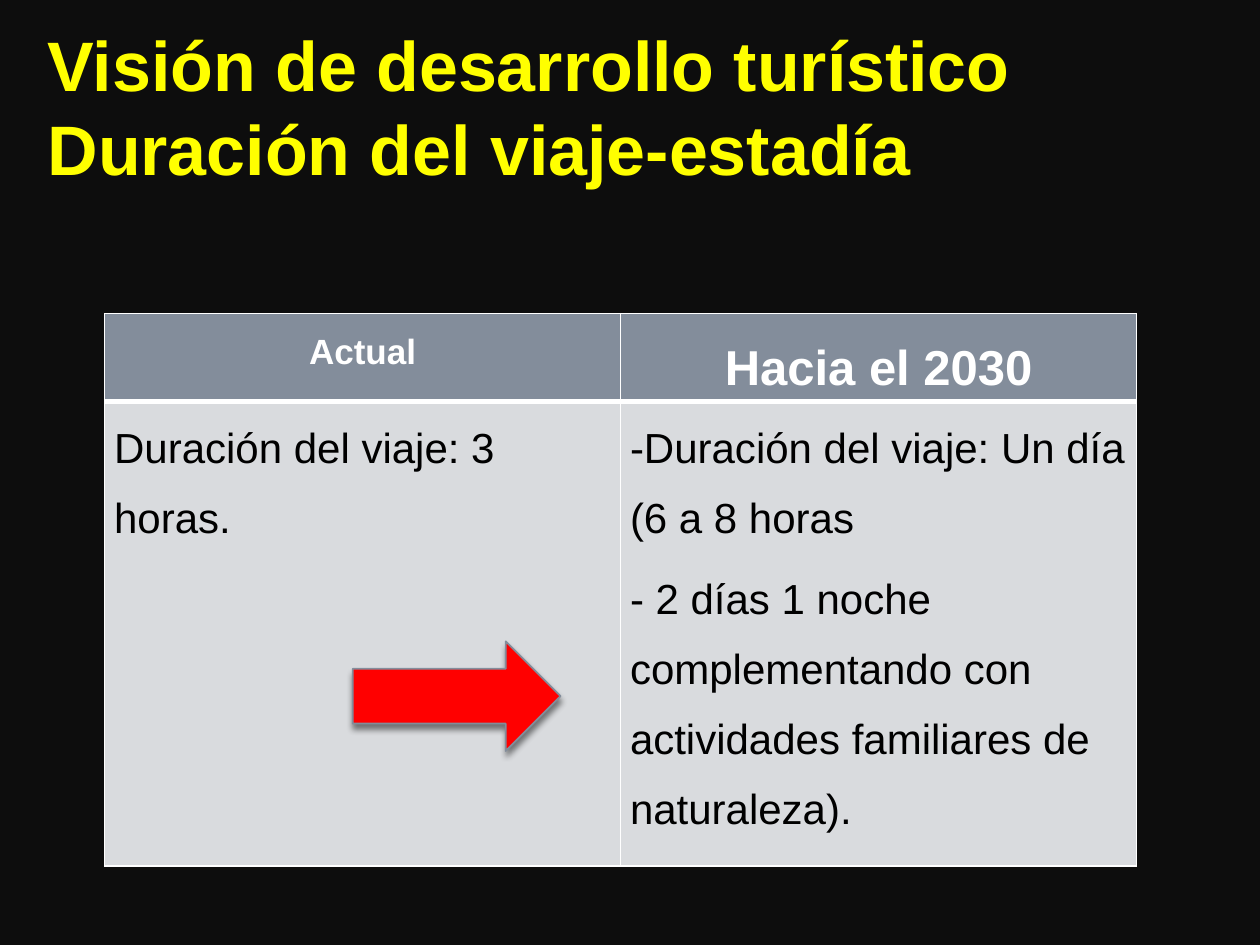
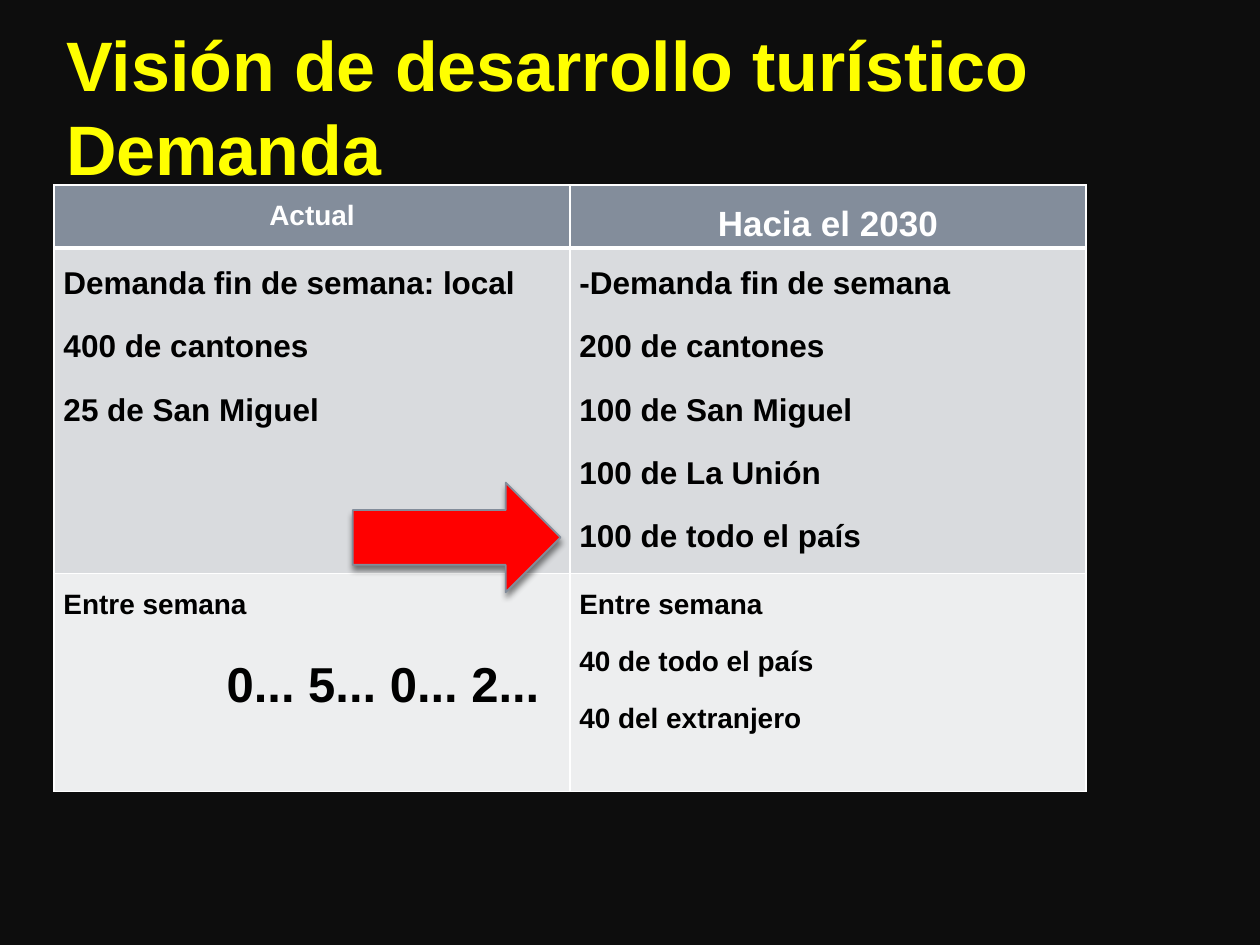
from lxml import etree
from pptx import Presentation
from pptx.dml.color import RGBColor
from pptx.enum.shapes import MSO_SHAPE as Preset
from pptx.enum.text import MSO_ANCHOR as Anchor, PP_ALIGN as Align
from pptx.oxml import parse_xml
from pptx.oxml.ns import nsdecls, qn
from pptx.util import Cm, Pt

# Shared look
BLACK = RGBColor(0x00, 0x00, 0x00)
NIGHT = RGBColor(0x0D, 0x0D, 0x0D)
YELLOW = RGBColor(0xFF, 0xFF, 0x00)
WHITE = RGBColor(0xFF, 0xFF, 0xFF)
RED = RGBColor(0xFF, 0x00, 0x00)
SLATE = RGBColor(0x83, 0x8D, 0x9B)
ROW_FILLS = (SLATE, RGBColor(0xD9, 0xDB, 0xDE), RGBColor(0xED, 0xEE, 0xEF))
FONT = "Arial"
TITLE = "Visión de desarrollo turístico"
HEADINGS = ("Actual", "Hacia el 2030")
COLUMN_WIDTH = 10.4
ARROW_LEFT, ARROW_WIDTH, ARROW_HEIGHT = 7.11, 4.19, 2.21
THIN, THICK = 1, 3

# Content: a line is (text, size) or (text, size, indent); lengths in cm
PAGES = [
    {
        "topic": "Duración del viaje-estadía",
        "title_left": 0.71,
        "table_at": (2.11, 6.32),
        "row_heights": (1.65, 8.71),
        "heading_sizes": (20, 28),
        "bold": False,
        "rows": [
            ([("Duración del viaje: 3 horas.", 24)],
             [("-Duración del viaje: Un día (6 a 8 horas", 24),
              ("- 2 días 1 noche complementando con actividades "
               "familiares de naturaleza).", 24)]),
        ],
        "arrow_top": 12.93,
    },
    {
        "topic": "Demanda",
        "title_left": 1.09,
        "table_at": (1.09, 3.73),
        "row_heights": (1.19, 6.15, 4.39),
        "heading_sizes": (16, 20),
        "bold": True,
        "rows": [
            ([("Demanda fin de semana: local", 18),
              ("400 de cantones", 18),
              ("25 de San Miguel", 18)],
             [("-Demanda fin de semana", 18),
              ("200 de cantones", 18),
              ("100 de San Miguel", 18),
              ("100 de La Unión", 18),
              ("100 de todo el país", 18)]),
            ([("Entre semana", 16),
              ("0... 5... 0... 2...", 28, 3.29)],
             [("Entre semana", 16),
              ("40 de todo el país", 16),
              ("40 del extranjero", 16)]),
        ],
        "arrow_top": 9.73,
    },
]


def add_span(para, text, size, color, bold):
    span = para.add_run()
    span.text = text
    font = span.font
    font.name, font.size, font.bold = FONT, Pt(size), bold
    font.color.rgb = color


def add_title(page, left, topic):
    box = page.shapes.add_textbox(Cm(left), 0, Cm(20.32), Cm(3.94))
    frame = box.text_frame
    frame.word_wrap = True
    frame.vertical_anchor = Anchor.BOTTOM
    para = frame.paragraphs[0]
    add_span(para, TITLE, 40, YELLOW, True)
    para.add_line_break()
    add_span(para, topic, 40, YELLOW, True)


def set_borders(cell, top, bottom):
    widths = {"a:lnL": THIN, "a:lnR": THIN, "a:lnT": top, "a:lnB": bottom}
    properties = cell._tc.get_or_add_tcPr()
    for tag, width in widths.items():
        line = etree.SubElement(properties, qn(tag), w=str(Pt(width)))
        fill = etree.SubElement(line, qn("a:solidFill"))
        etree.SubElement(fill, qn("a:srgbClr"), val=str(WHITE))


def fill_cell(cell, lines, row, bold):
    heading = row == 0
    cell.margin_left = cell.margin_right = Cm(0.19)
    cell.margin_top = cell.margin_bottom = 0
    set_borders(cell, THICK if row == 1 else THIN, THICK if heading else THIN)
    cell.fill.solid()
    cell.fill.fore_color.rgb = ROW_FILLS[row]
    frame = cell.text_frame
    for number, (text, size, *indent) in enumerate(lines):
        para = frame.add_paragraph() if number else frame.paragraphs[0]
        para.alignment = Align.CENTER if heading else Align.LEFT
        para.line_spacing, para.space_after = 1.5, Pt(6)
        if indent:
            para._p.get_or_add_pPr().set("marL", str(Cm(indent[0])))
        add_span(para, text, size, WHITE if heading else BLACK, bold)


def add_comparison(page, content):
    headings = [[line] for line in zip(HEADINGS, content["heading_sizes"])]
    rows = [headings, *content["rows"]]
    heights = content["row_heights"]
    left, top = content["table_at"]
    table = page.shapes.add_table(
        len(rows), len(HEADINGS), Cm(left), Cm(top),
        Cm(COLUMN_WIDTH * len(HEADINGS)), Cm(sum(heights))).table
    table.first_row = table.horz_banding = False
    for column in table.columns:
        column.width = Cm(COLUMN_WIDTH)
    for row, cells in enumerate(rows):
        table.rows[row].height = Cm(heights[row])
        for column, lines in enumerate(cells):
            fill_cell(table.cell(row, column), lines, row,
                      row == 0 or content["bold"])


def add_arrow(page, top):
    arrow = page.shapes.add_shape(Preset.RIGHT_ARROW, Cm(ARROW_LEFT), Cm(top),
                                  Cm(ARROW_WIDTH), Cm(ARROW_HEIGHT))
    arrow.fill.solid()
    arrow.fill.fore_color.rgb = RED
    arrow.line.color.rgb = SLATE
    arrow.line.width = Pt(1)
    # Soft shadow straight below
    arrow.shadow.inherit = False
    effects = arrow._element.spPr.find(qn("a:effectLst"))
    effects.append(parse_xml(
        f'<a:outerShdw {nsdecls("a")} blurRad="{Pt(3.8)}" dist="{Pt(3)}" '
        f'dir="5400000" rotWithShape="0"><a:srgbClr val="{BLACK}">'
        '<a:alpha val="48000"/></a:srgbClr></a:outerShdw>'))


def main():
    deck = Presentation()
    deck.slide_width, deck.slide_height = Cm(25.4), Cm(19.05)
    for content in PAGES:
        page = deck.slides.add_slide(deck.slide_layouts[6])
        page.background.fill.solid()
        page.background.fill.fore_color.rgb = NIGHT
        add_title(page, content["title_left"], content["topic"])
        add_comparison(page, content)
        add_arrow(page, content["arrow_top"])
    deck.save("out.pptx")


if __name__ == "__main__":
    main()
